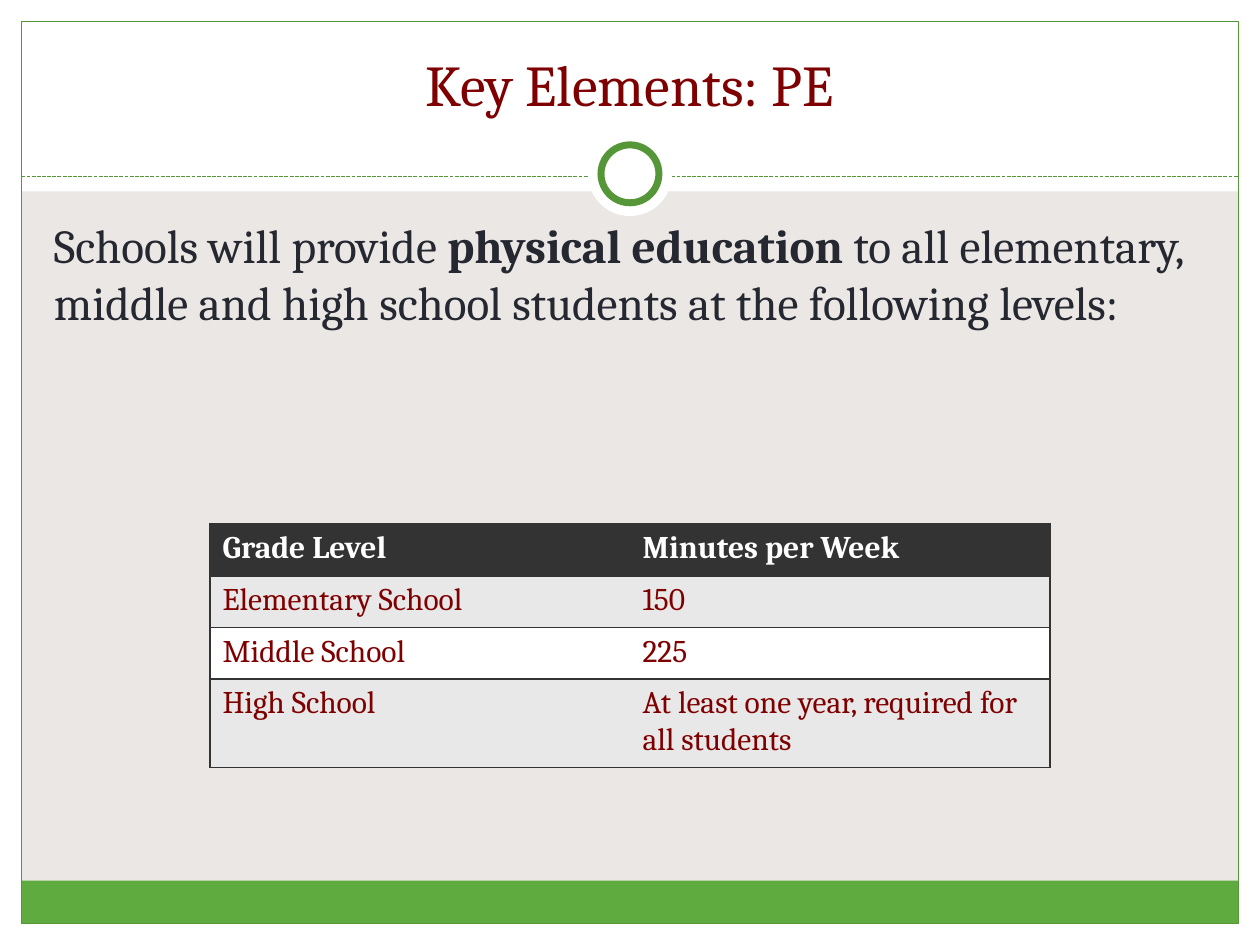
import pptx
import pptx.dml.color
import pptx.enum.dml
import pptx.enum.shapes
import pptx.enum.text
import pptx.oxml
import pptx.oxml.ns
import pptx.util

Inches = pptx.util.Inches
Pt = pptx.util.Pt
RGBColor = pptx.dml.color.RGBColor
SHAPES = pptx.enum.shapes.MSO_SHAPE
ANCHORS = pptx.enum.text.MSO_ANCHOR
ALIGNMENTS = pptx.enum.text.PP_ALIGN

TITLE = "Key Elements: PE"
BODY = [
    ("Schools will provide ", False),
    ("physical education ", True),
    ("to all elementary, middle and high school students at the following levels:", False),
]
LEVELS = [
    ("Grade Level", "Minutes per Week"),
    ("Elementary School", "150"),
    ("Middle School", "225"),
    ("High School", "At least one year, required for all students"),
]

FONT = "Cambria"
WHITE = RGBColor(0xFF, 0xFF, 0xFF)
PAPER = RGBColor(0xEA, 0xE7, 0xE4)
GREEN = RGBColor(0x60, 0xAB, 0x3F)
DARK_GREEN = RGBColor(0x55, 0x97, 0x38)
MAROON = RGBColor(0x7F, 0x00, 0x00)
INK = RGBColor(0x25, 0x27, 0x31)
CHARCOAL = RGBColor(0x33, 0x33, 0x33)
BAND = RGBColor(0xE8, 0xE8, 0xE8)

WIDTH, HEIGHT = 10, 7.5
MARGIN = 0.17
HEADER_HEIGHT = 1.52
FOOTER_HEIGHT = 0.34
RULE_Y = 1.4
RING_CENTER = (WIDTH / 2, 1.38)
INNER_WIDTH = WIDTH - 2 * MARGIN
INNER_HEIGHT = HEIGHT - 2 * MARGIN
TABLE_WIDTH = WIDTH * 2 / 3
TABLE_TOP = 4.16
ROW_HEIGHT = 0.41


def add_panel(page, kind, bounds, fill=None, line=None, weight=0.75):
    panel = page.shapes.add_shape(kind, *map(Inches, bounds))
    panel.shadow.inherit = False
    if fill is None:
        panel.fill.background()
    else:
        panel.fill.solid()
        panel.fill.fore_color.rgb = fill
    if line is None:
        panel.line.fill.background()
    else:
        panel.line.color.rgb = line
        panel.line.width = Pt(weight)


def add_circle(page, diameter, **style):
    left, top = (center - diameter / 2 for center in RING_CENTER)
    add_panel(page, SHAPES.OVAL, (left, top, diameter, diameter), **style)


def add_span(para, text, size, color, bold=False):
    span = para.add_run()
    span.text = text
    span.font.name = FONT
    span.font.size = Pt(size)
    span.font.bold = bold
    span.font.color.rgb = color


def add_text_box(page, bounds, anchor):
    """Add a wrapping text box and return its first paragraph."""
    frame = page.shapes.add_textbox(*map(Inches, bounds)).text_frame
    frame.word_wrap = True
    frame.vertical_anchor = anchor
    return frame.paragraphs[0]


def add_frame(page):
    page.background.fill.solid()
    page.background.fill.fore_color.rgb = PAPER
    for bounds in (
        (0, HEIGHT - MARGIN, WIDTH, MARGIN),
        (0, 0, WIDTH, HEADER_HEIGHT),
        (0, 0, MARGIN, HEIGHT),
        (WIDTH - MARGIN, 0, MARGIN, HEIGHT),
    ):
        add_panel(page, SHAPES.RECTANGLE, bounds, fill=WHITE)
    footer_top = HEIGHT - MARGIN - FOOTER_HEIGHT
    add_panel(page, SHAPES.RECTANGLE,
              (MARGIN, footer_top, INNER_WIDTH, FOOTER_HEIGHT), fill=GREEN)
    add_panel(page, SHAPES.RECTANGLE,
              (MARGIN, MARGIN, INNER_WIDTH, INNER_HEIGHT), line=DARK_GREEN)

    rule = page.shapes.add_connector(
        pptx.enum.shapes.MSO_CONNECTOR.STRAIGHT,
        *map(Inches, (MARGIN, RULE_Y, WIDTH - MARGIN, RULE_Y)))
    rule.line.color.rgb = DARK_GREEN
    rule.line.width = Pt(0.75)
    rule.line.dash_style = pptx.enum.dml.MSO_LINE.SQUARE_DOT
    properties = rule.element.spPr
    properties.append(pptx.oxml.parse_xml(
        f"<a:effectLst {pptx.oxml.ns.nsdecls('a')}/>"))

    add_circle(page, 0.67, fill=WHITE)
    add_circle(page, 0.46, fill=WHITE, line=DARK_GREEN, weight=4)


def set_borders(cell, sides):
    """Draw the given sides (L, R, T, B) and clear the others."""
    properties = cell._tc.get_or_add_tcPr()
    for index, side in enumerate("LRTB"):
        paint = (f'<a:solidFill><a:srgbClr val="{CHARCOAL}"/></a:solidFill>'
                 if side in sides else "<a:noFill/>")
        properties.insert(index, pptx.oxml.parse_xml(
            f'<a:ln{side} {pptx.oxml.ns.nsdecls("a")} w="{Pt(1)}">{paint}</a:ln{side}>'))


def add_levels_table(page):
    bounds = ((WIDTH - TABLE_WIDTH) / 2, TABLE_TOP,
              TABLE_WIDTH, ROW_HEIGHT * len(LEVELS))
    table = page.shapes.add_table(
        len(LEVELS), len(LEVELS[0]), *map(Inches, bounds)).table
    for row, texts in enumerate(LEVELS):
        header = row == 0
        fill = CHARCOAL if header else (BAND if row % 2 else WHITE)
        for column, text in enumerate(texts):
            cell = table.cell(row, column)
            cell.fill.solid()
            cell.fill.fore_color.rgb = fill
            set_borders(cell, "LTB" if column == 0 else "RTB")
            add_span(cell.text_frame.paragraphs[0], text, 18,
                     WHITE if header else MAROON, bold=header)


def main():
    deck = pptx.Presentation()
    deck.slide_width, deck.slide_height = Inches(WIDTH), Inches(HEIGHT)
    page = deck.slides.add_slide(deck.slide_layouts[6])
    add_frame(page)

    title = add_text_box(page, (0.33, 0.16, 9.33, 0.83), ANCHORS.BOTTOM)
    title.alignment = ALIGNMENTS.CENTER
    add_span(title, TITLE, 33, MAROON)

    body = add_text_box(page, (0.33, 1.67, 9.3, 5), ANCHORS.TOP)
    body.space_before = Pt(5.4)
    for text, bold in BODY:
        add_span(body, text, 27, INK, bold)

    add_levels_table(page)
    deck.save("out.pptx")


if __name__ == "__main__":
    main()
